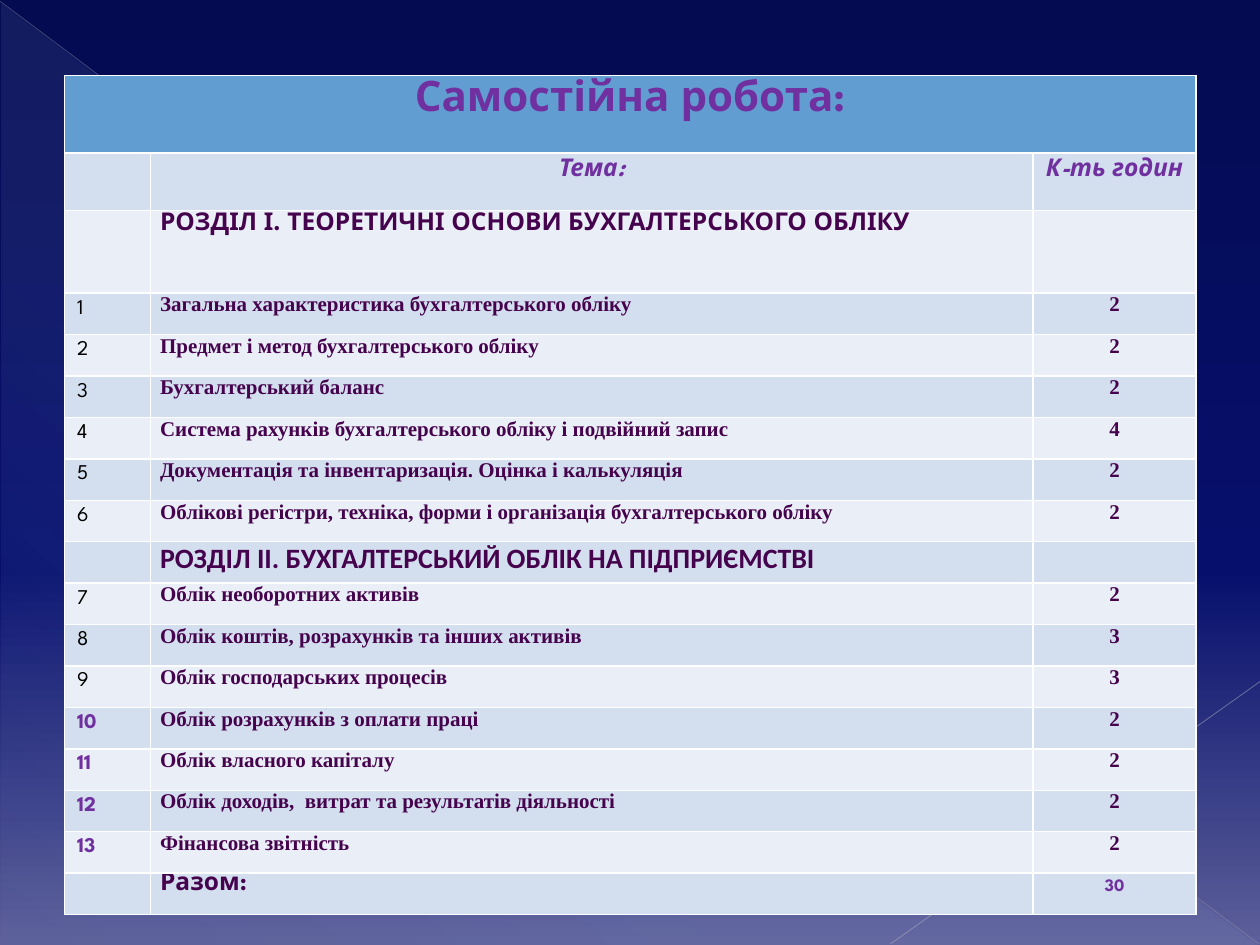
"""Build the slide with the table of independent study hours."""
from lxml.etree import SubElement
from pptx import Presentation
from pptx.dml.color import RGBColor
from pptx.enum.shapes import MSO_CONNECTOR, MSO_SHAPE
from pptx.enum.text import PP_ALIGN
from pptx.oxml.ns import qn
from pptx.util import Pt

SPARTAN, TIMES, CALIBRI = "League Spartan", "Times New Roman", "Calibri"
PURPLE, PLUM, BLACK = "7030A0", "46034D", "000000"
TITLE = "Самостійна робота:"
HEADER = ("", "Тема:", "К-ть годин")
SECTION_1 = ("", "РОЗДІЛ І. ТЕОРЕТИЧНІ ОСНОВИ БУХГАЛТЕРСЬКОГО ОБЛІКУ", "")
SECTION_2 = ("", "РОЗДІЛ ІІ. БУХГАЛТЕРСЬКИЙ ОБЛІК НА ПІДПРИЄМСТВІ", "")
TOTAL = ("", "Разом:", "30")
TOPICS = [
    ("1", "Загальна характеристика бухгалтерського обліку", "2"),
    ("2", "Предмет і метод бухгалтерського обліку", "2"),
    ("3", "Бухгалтерський баланс", "2"),
    ("4", "Система рахунків бухгалтерського обліку і подвійний запис", "4"),
    ("5", "Документація та інвентаризація. Оцінка і калькуляція", "2"),
    ("6", "Облікові регістри, техніка, форми і організація бухгалтерського обліку", "2"),
    ("7", "Облік необоротних активів", "2"),
    ("8", "Облік коштів, розрахунків та інших активів", "3"),
    ("9", "Облік господарських процесів", "3"),
    ("10", "Облік розрахунків з оплати праці", "2"),
    ("11", "Облік власного капіталу", "2"),
    ("12", "Облік доходів,  витрат та результатів діяльності", "2"),
    ("13", "Фінансова звітність", "2"),
]


def rgb(color):
    return RGBColor.from_string(color)


def set_gradient(fill, element, stops, angle):
    fill.gradient()
    grad = next(element.iter(qn("a:gradFill")))
    grad.find(qn("a:lin")).set("ang", str(angle * 60000))
    gs_lst = grad.find(qn("a:gsLst"))
    gs_lst.clear()
    for pos, color, alpha in stops:
        gs = SubElement(gs_lst, qn("a:gs"), pos=str(pos * 1000))
        clr = SubElement(gs, qn("a:srgbClr"), val=color)
        SubElement(clr, qn("a:alpha"), val=str(alpha * 1000))


prs = Presentation()
prs.slide_width, prs.slide_height = Pt(720), Pt(540)
s = prs.slides.add_slide(prs.slide_layouts[6])
set_gradient(s.background.fill, s.element,
             [(0, "040B51", 100), (60, "060F6C", 100), (100, "5C5F99", 100)], 90)

sp = s.shapes.add_shape(MSO_SHAPE.RIGHT_TRIANGLE, Pt(0.7), Pt(1.4), Pt(718.6), Pt(538.6))
sp.shadow.inherit = False
sp.line.fill.background()
set_gradient(sp.fill, sp.element,
             [(0, "ACCBF9", 10), (70, "ACCBF9", 8), (100, "ACCBF9", 1)], 133)

for x1, y1, x2, y2, color, width, alpha in [
    (0, 0.7, 719.3, 539.3, "B2B3BE", 0.39, 35),
    (720, 389.5, 509, 539.3, "BBBCC5", 0.47, 45),
]:
    ln = s.shapes.add_connector(MSO_CONNECTOR.STRAIGHT, Pt(x1), Pt(y1), Pt(x2), Pt(y2))
    ln.line.color.rgb = rgb(color)
    ln.line.width = Pt(width)
    clr = next(ln.element.iter(qn("a:srgbClr")))
    SubElement(clr, qn("a:alpha"), val=str(alpha * 1000))
    SubElement(ln.element.spPr, qn("a:effectLst"))

rows = [(TITLE, "", ""), HEADER, SECTION_1, *TOPICS[:6], SECTION_2, *TOPICS[6:], TOTAL]
widths = [49.2, 504.2, 93.2]
heights = [44.3, 32.7, 47.4] + [23.67] * 15
tbl = s.shapes.add_table(len(rows), 3, Pt(36.9), Pt(43.2), Pt(sum(widths)), Pt(sum(heights))).table
tbl.first_row = tbl.horz_banding = False
for col, width in zip(tbl.columns, widths):
    col.width = Pt(width)
for row, height in zip(tbl.rows, heights):
    row.height = Pt(height)
tbl.cell(0, 0).merge(tbl.cell(0, 2))

for i, row in enumerate(rows):
    for j, text in enumerate(row):
        cell = tbl.cell(i, j)
        tc_pr = cell._tc.get_or_add_tcPr()
        for side in ("a:lnL", "a:lnR", "a:lnT", "a:lnB"):
            border = SubElement(tc_pr, qn(side), w=str(Pt(1)))
            SubElement(SubElement(border, qn("a:solidFill")), qn("a:srgbClr"), val="FFFFFF")
        cell.fill.solid()
        cell.fill.fore_color.rgb = rgb("629DD1" if i == 0 else ("EAEFF7", "D3DFEE")[i % 2])

        font, size, color, bold = SPARTAN, 14, PURPLE, True
        if row[0] == TITLE:
            size = 24
        elif row in TOPICS and j == 0:
            size, bold = 12, int(text) > 9
            color = PURPLE if bold else BLACK
        elif row in TOPICS:
            font, size, color = TIMES, 12, PLUM
        elif row == SECTION_2:
            font, size, color = CALIBRI, 16, PLUM
        elif row == TOTAL and j == 2:
            size = 10
        elif row != HEADER:
            color = PLUM

        if color == PLUM or not text:
            cell.margin_left = cell.margin_right = Pt(5.4)
            cell.margin_top = cell.margin_bottom = Pt(0)
        if not text:
            continue
        p = cell.text_frame.paragraphs[0]
        p.text = text
        if i < 2 or j == 2:
            p.alignment = PP_ALIGN.CENTER
        if row == SECTION_1:
            p.line_spacing = 1.15
        r = p.runs[0]
        r.font.name, r.font.size, r.font.bold = font, Pt(size), bold
        r.font.italic = row == HEADER
        r.font.color.rgb = rgb(color)

prs.save("out.pptx")
